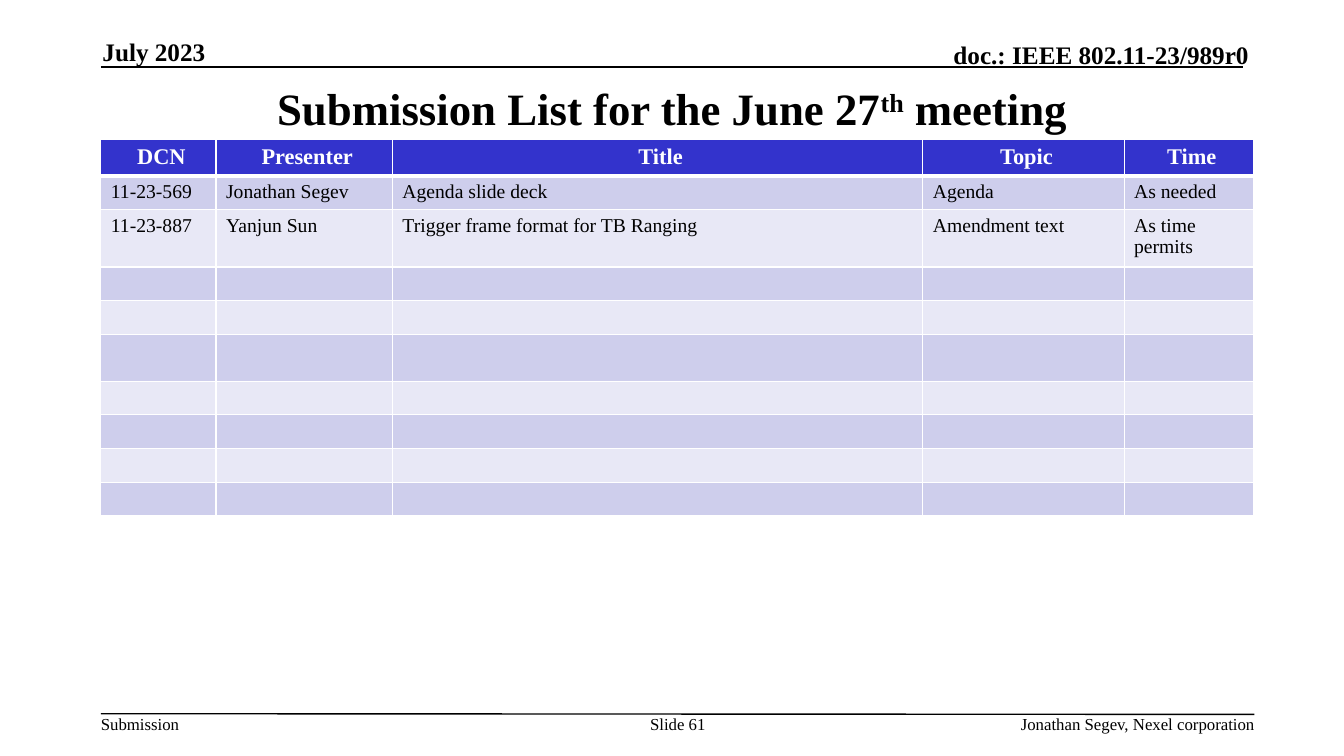
from dataclasses import dataclass
from lxml.etree import SubElement
from pptx import Presentation
from pptx.dml.color import RGBColor
from pptx.enum.shapes import MSO_CONNECTOR
from pptx.enum.text import MSO_ANCHOR, MSO_AUTO_SIZE, PP_ALIGN
from pptx.oxml.ns import qn
from pptx.util import Pt


@dataclass(frozen=True)
class Theme:
    face: str = "Times New Roman"
    ink: str = "000000"
    paper: str = "FFFFFF"
    head: str = "3333CC"
    bands: tuple = ("CECEEC", "E8E8F6")
    title: int = 32
    top: int = 18
    label: int = 16
    cell: int = 14
    foot: int = 12


THEME = Theme()
LEFT, MID, RIGHT = PP_ALIGN.LEFT, PP_ALIGN.CENTER, PP_ALIGN.RIGHT

WIDTHS = (82.3, 126, 378.9, 143.8, 92.3)
HEIGHTS = (24.6, 22.8, 37.9, 22.8, 22.8, 33.5, 22.8, 22.6, 22.6, 22.6)
ROWS = (
    ("DCN", "Presenter", "Title", "Topic", "Time"),
    ("11-23-569", "Jonathan Segev", "Agenda slide deck", "Agenda", "As needed"),
    ("11-23-887", "Yanjun Sun", "Trigger frame format for TB Ranging",
     "Amendment text", "As time permits"),
)


def style(runs, size, color=THEME.ink, bold=False):
    for run in runs:
        font = run.font
        font.name, font.size, font.bold = THEME.face, Pt(size), bold
        font.color.rgb = RGBColor.from_string(color)


def add_title(slide, parts):
    """Fill the title; each part is a text and its baseline shift."""
    title = slide.shapes.title
    title.left, title.top = Pt(72), Pt(54)
    title.width, title.height = Pt(816), Pt(46)
    frame = title.text_frame
    frame.word_wrap = True
    frame.auto_size = MSO_AUTO_SIZE.NONE
    frame.vertical_anchor = MSO_ANCHOR.MIDDLE
    para = frame.paragraphs[0]
    para.alignment = MID
    for text, shift in parts:
        run = para.add_run()
        run.text = text
        if shift:
            run._r.get_or_add_rPr().set("baseline", str(shift))
    style(para.runs, THEME.title, bold=True)


def add_label(slide, text, box, size, align, bold=False, anchor=MSO_ANCHOR.TOP):
    shape = slide.shapes.add_textbox(*map(Pt, box))
    frame = shape.text_frame
    frame.margin_left = frame.margin_right = 0
    frame.margin_top = frame.margin_bottom = 0
    frame.word_wrap = True
    frame.vertical_anchor = anchor
    frame.text = text
    para = frame.paragraphs[0]
    para.alignment = align
    style(para.runs, size, bold=bold)


def add_rule(slide, *ends):
    rule = slide.shapes.add_connector(MSO_CONNECTOR.STRAIGHT, *map(Pt, ends))
    rule.line.color.rgb = RGBColor.from_string(THEME.ink)
    rule.line.width = Pt(1)
    SubElement(rule._element.spPr, qn("a:effectLst"))


def add_edges(cell, top, bottom):
    props = cell._tc.get_or_add_tcPr()
    for side, width in (("L", 1), ("R", 1), ("T", top), ("B", bottom)):
        edge = SubElement(props, qn(f"a:ln{side}"), w=str(Pt(width)))
        fill = SubElement(edge, qn("a:solidFill"))
        SubElement(fill, qn("a:srgbClr"), val=THEME.paper)


def fill_cell(cell, text, row):
    head = row == 0
    add_edges(cell, 3 if row == 1 else 1, 3 if head else 1)
    cell.fill.solid()
    color = THEME.head if head else THEME.bands[(row - 1) % 2]
    cell.fill.fore_color.rgb = RGBColor.from_string(color)
    cell.margin_left = Pt(7.2)
    cell.margin_right = Pt(2.9 if head else 7.2)
    cell.margin_top = cell.margin_bottom = Pt(3.6)
    para = cell.text_frame.paragraphs[0]
    if text:
        para.text = text
        para.alignment = MID if head else LEFT
        size, ink = (THEME.label, THEME.paper) if head else (THEME.cell, THEME.ink)
        style(para.runs, size, ink, head)
    else:
        # An empty cell keeps its type size, so its row stays low
        mark = SubElement(para._p, qn("a:endParaRPr"), sz=str(THEME.cell * 100))
        SubElement(mark, qn("a:latin"), typeface=THEME.face)


def add_grid(slide, left, top):
    frame = slide.shapes.add_table(len(HEIGHTS), len(WIDTHS), Pt(left), Pt(top),
                                   Pt(sum(WIDTHS)), Pt(sum(HEIGHTS)))
    table = frame.table
    for col, width in zip(table.columns, WIDTHS):
        col.width = Pt(width)
    for i, height in enumerate(HEIGHTS):
        table.rows[i].height = Pt(height)
        texts = ROWS[i] if i < len(ROWS) else ("",) * len(WIDTHS)
        for j, text in enumerate(texts):
            fill_cell(table.cell(i, j), text, i)


def main():
    deck = Presentation()
    deck.slide_width, deck.slide_height = Pt(960), Pt(540)
    slide = deck.slides.add_slide(deck.slide_layouts[5])

    # Header
    add_rule(slide, 72, 48, 888, 48)
    low = MSO_ANCHOR.BOTTOM
    add_label(slide, "July 2023", (73.2, 26.2, 196.6, 21.5), THEME.top, LEFT, True, low)
    add_label(slide, "doc.: IEEE 802.11-23/989r0", (525, 28.1, 367, 21.6),
              THEME.top, RIGHT, True, low)

    # Title and submissions
    add_title(slide, (("Submission List for the June 27", 0), ("th", 30000),
                      (" meeting", 0)))
    add_grid(slide, 72, 99.4)

    # Footer
    add_rule(slide, 72, 509.8, 896, 510.3)
    add_label(slide, "Submission", (72, 510, 57, 14.4), THEME.foot, LEFT)
    add_label(slide, "Slide 61", (456.5, 510, 55.4, 28.8), THEME.foot, MID)
    add_label(slide, "Jonathan Segev, Nexel corporation", (562.3, 510, 334, 14.4),
              THEME.foot, RIGHT)

    deck.save("out.pptx")


if __name__ == "__main__":
    main()
